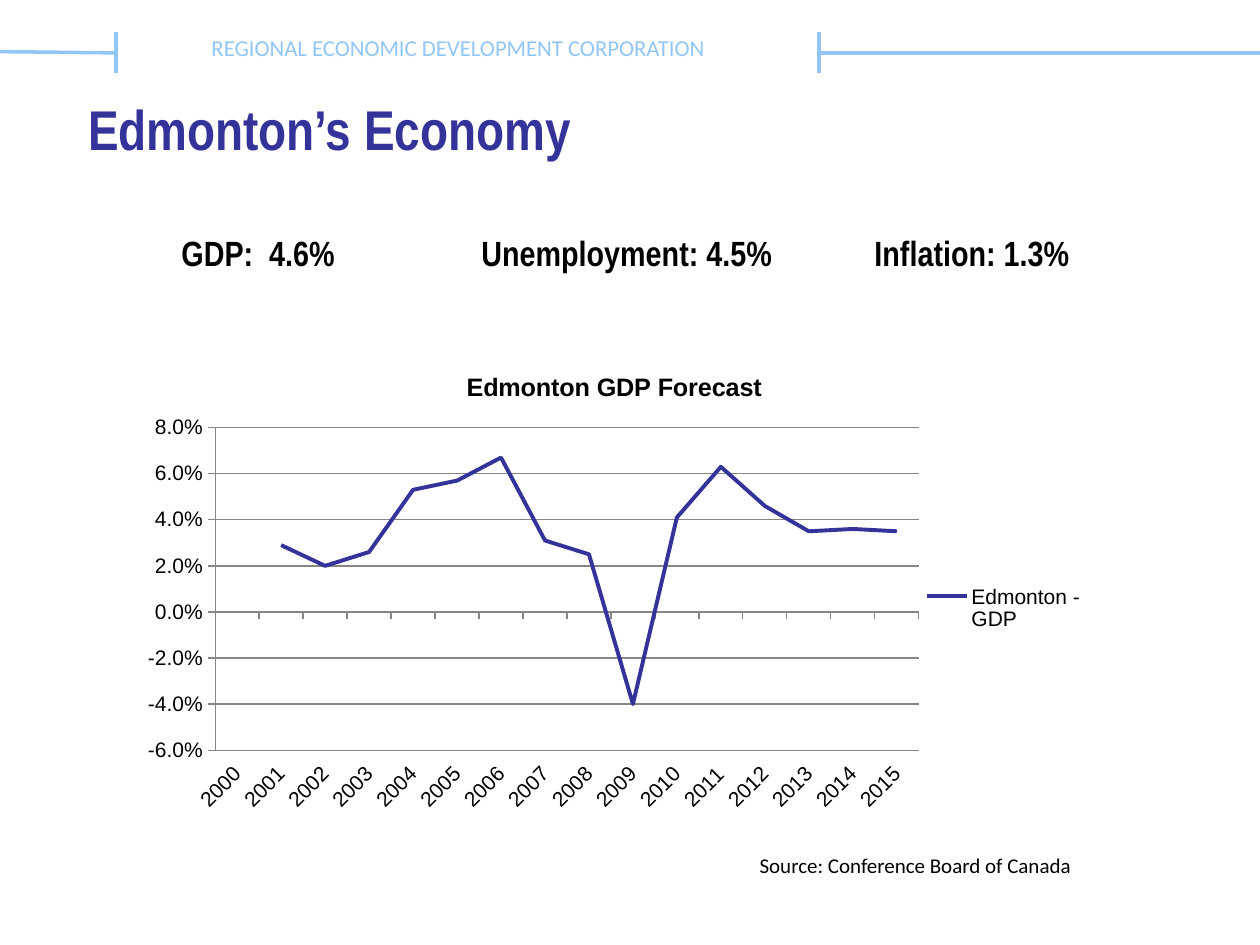
from lxml import etree
from pptx import Presentation
from pptx.chart.data import CategoryChartData
from pptx.dml.color import RGBColor
from pptx.enum.chart import XL_CHART_TYPE, XL_LEGEND_POSITION, XL_TICK_LABEL_POSITION, XL_TICK_MARK
from pptx.enum.shapes import MSO_CONNECTOR
from pptx.enum.text import MSO_ANCHOR, MSO_AUTO_SIZE
from pptx.oxml.ns import qn
from pptx.util import Inches, Pt

LINE = XL_CHART_TYPE.LINE
RIGHT = XL_LEGEND_POSITION.RIGHT
LOW = XL_TICK_LABEL_POSITION.LOW
OUTSIDE = XL_TICK_MARK.OUTSIDE
NO_TICK = XL_TICK_MARK.NONE
STRAIGHT = MSO_CONNECTOR.STRAIGHT
TOP, MIDDLE = MSO_ANCHOR.TOP, MSO_ANCHOR.MIDDLE
NO_FIT = MSO_AUTO_SIZE.NONE

SKY = RGBColor(0x91, 0xC6, 0xF7)
NAVY = RGBColor(0x33, 0x33, 0x99)
BLACK = RGBColor(0, 0, 0)
GRAY = RGBColor(0x86, 0x86, 0x86)

GDP_GROWTH = [None, 0.029, 0.02, 0.026, 0.053, 0.057, 0.067, 0.031,
              0.025, -0.04, 0.041, 0.063, 0.046, 0.035, 0.036, 0.035]


def set_format(target, **values):
    for name, value in values.items():
        setattr(target, name, value)


def set_font(font, color, **values):
    set_format(font, **values)
    font.color.rgb = color


def add_layout(parent, index, inner=False, **fractions):
    """Give a chart part a fixed place, in fractions of the chart's size."""
    for old in parent.findall(qn("c:layout")):
        parent.remove(old)
    layout = etree.Element(qn("c:layout"))
    manual = etree.SubElement(layout, qn("c:manualLayout"))
    values = {"layoutTarget": "inner"} if inner else {}
    values.update(xMode="edge", yMode="edge", **fractions)
    for name, value in values.items():
        etree.SubElement(manual, qn(f"c:{name}")).set("val", str(value))
    parent.insert(index, layout)


class SlideBuilder:
    def __init__(self, prs):
        self.s = prs.slides.add_slide(prs.slide_layouts[5])

    def rule(self, x1, y1, x2, y2):
        line = self.s.shapes.add_connector(
            STRAIGHT, Inches(x1), Inches(y1), Inches(x2), Inches(y2))
        line.line.color.rgb = SKY
        line.line.width = Pt(2)
        etree.SubElement(line._element.spPr, qn("a:effectLst"))

    def fill_text(self, sp, text, color, anchor=TOP, wrap=True, **font):
        tf = sp.text_frame
        set_format(tf, text=text, word_wrap=wrap, auto_size=NO_FIT, vertical_anchor=anchor)
        set_font(tf.paragraphs[0].runs[0].font, color, **font)
        return tf

    def title(self, text, x, y, w, h):
        sp = self.s.shapes.title
        set_format(sp, left=Inches(x), top=Inches(y), width=Inches(w), height=Inches(h))
        tf = self.fill_text(sp, text, NAVY, name="Arial Narrow", size=Pt(32), bold=True)
        tf.paragraphs[0].alignment = 1

    def text(self, text, x, y, w, h, color, **style):
        sp = self.s.shapes.add_textbox(Inches(x), Inches(y), Inches(w), Inches(h))
        return self.fill_text(sp, text, color, **style)

    def figures(self, items, x, y, w, h, indent, stops):
        """Place the key figures on one line, spread by tab stops."""
        tf = self.text("\t".join(items), x, y, w, h, BLACK,
                       name="Arial Narrow", size=Pt(20), bold=True)
        tf.margin_left = Inches(indent)
        tabs = etree.SubElement(tf.paragraphs[0]._p.get_or_add_pPr(), qn("a:tabLst"))
        for stop in stops:
            etree.SubElement(tabs, qn("a:tab"), pos=str(Inches(stop)), algn="l")

    def line_chart(self, title, name, cats, values, x, y, w, h):
        data = CategoryChartData(number_format="0.0%")
        data.categories = cats
        data.add_series(name, values)
        chart = self.s.shapes.add_chart(
            LINE, Inches(x), Inches(y), Inches(w), Inches(h), data).chart
        set_font(chart.font, BLACK, name="Arial", size=Pt(12))

        chart.has_title = True
        tf = chart.chart_title.text_frame
        tf.text = title
        set_font(tf.paragraphs[0].runs[0].font, BLACK, name="Arial", size=Pt(14.4), bold=True)
        chart.chart_title.include_in_layout = False

        chart.has_legend = True
        set_format(chart.legend, position=RIGHT, include_in_layout=False)
        add_layout(chart.legend._element, 1, x=0.82, y=0.5, w=0.17, h=0.12)
        add_layout(chart._chartSpace.chart.plotArea, 0, inner=True,
                   x=0.085, y=0.168, w=0.732, h=0.7)

        for axis in (chart.category_axis, chart.value_axis):
            set_format(axis, major_tick_mark=OUTSIDE, minor_tick_mark=NO_TICK)
            axis.format.line.color.rgb = GRAY
            set_font(axis.tick_labels.font, BLACK, name="Arial", size=Pt(12))
        chart.category_axis.tick_label_position = LOW
        body = chart.category_axis._element.find(qn("c:txPr")).find(qn("a:bodyPr"))
        body.set("rot", str(-45 * 60000))
        set_format(chart.value_axis, minimum_scale=-0.06, maximum_scale=0.08,
                   major_unit=0.02, has_major_gridlines=True)
        chart.value_axis.major_gridlines.format.line.color.rgb = GRAY
        set_format(chart.value_axis.tick_labels, number_format="0.0%",
                   number_format_is_linked=False)

        plot = chart.plots[0]
        plot.vary_by_categories = False
        series = plot.series[0]
        series.smooth = False
        series.format.line.color.rgb = NAVY
        series.format.line.width = Pt(2.25)


def main():
    prs = Presentation()
    set_format(prs, slide_width=Inches(10), slide_height=Inches(7.5))
    slide = SlideBuilder(prs)

    slide.rule(6.5, 0.42, 10, 0.42)
    slide.rule(0, 0.41, 0.92, 0.42)
    for x in (0.92, 6.5):
        slide.rule(x, 0.58, x, 0.25)
    slide.text("REGIONAL ECONOMIC DEVELOPMENT CORPORATION", 1.58, 0.17, 4.42, 0.42,
               SKY, anchor=MIDDLE, name="Calibri", size=Pt(13))

    slide.title("Edmonton’s Economy", 0.6, 0.7, 8.98, 0.63)
    slide.figures(["GDP:  4.6%", "Unemployment: 4.5%", "Inflation: 1.3%"],
                  0.4, 1.79, 9.12, 0.51, indent=1.04, stops=(2.38, 5.5))
    slide.text("Source: Conference Board of Canada", 5.93, 6.72, 2.69, 0.3,
               BLACK, wrap=False, name="Calibri", size=Pt(12))
    slide.line_chart("Edmonton GDP Forecast", "Edmonton - GDP",
                     [str(year) for year in range(2000, 2016)], GDP_GROWTH,
                     1.06, 2.78, 7.63, 3.66)
    prs.save("out.pptx")


if __name__ == "__main__":
    main()
